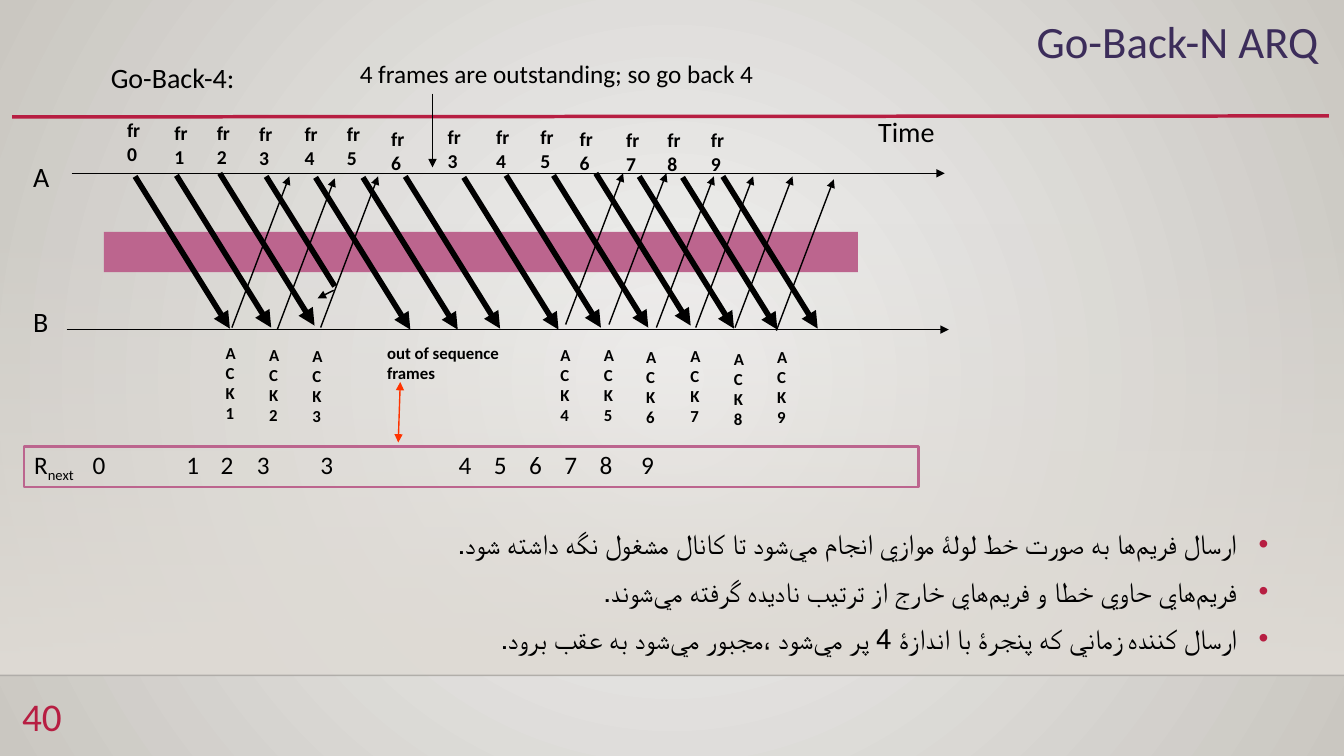
from lxml import etree
from pptx import Presentation, util as u
from pptx.dml.color import RGBColor
from pptx.enum import shapes, text
from pptx.oxml import parse_xml
from pptx.oxml.ns import nsdecls, qn

PX = 9144
COLORS = {
    "black": "000000", "title": "3C2D5A", "accent": "B71E42", "plum": "BC658E",
    "orange": "FF3300", "rule": "000001", "light": "F2F2F2", "dark": "CAC7C1", "sand": "DFDBD5",
}
CENTER_SHADE = '<a:path path="circle"><a:fillToRect l="50000" t="50000" r="50000" b="50000"/></a:path>'
DOWN_SHADE = '<a:lin ang="5400000" scaled="0"/>'
MARGINS = (10, 5)
WIDE_MARGINS = (15, 8)
PLAIN = {"name": "Calibri", "size": u.Pt(20)}
NOTE = {**PLAIN, "size": u.Pt(18)}
FRAME_LABEL = {**PLAIN, "size": u.Pt(14), "bold": True}
ACK_LABEL = {**FRAME_LABEL, "size": u.Pt(12)}
HEADING = {**PLAIN, "size": u.Pt(32)}
PAGE_NUMBER = {**PLAIN, "size": u.Pt(28)}

FRAME_STEP = (94, 151)
FRAMES = [
    (0, 111, 9, 134, 75), (1, 158, 12, 175, 74), (2, 200, 12, 218, 72), (3, 242, 13, 264, 75),
    (4, 287, 13, 313, 76), (5, 329, 13, 360, 76), (6, 373, 18, 402, 75), (3, 429, 16, 460, 76),
    (4, 477, 16, 502, 74), (5, 521, 16, 549, 74), (6, 560, 18, 591, 72), (7, 606, 19, 634, 75),
    (8, 647, 19, 677, 76), (9, 690, 19, 717, 75),
]
LOST_FRAME = 3
LOST_STEP = (68, 109)
ACK_STEP = (57, -150)
ACKS = [
    (214, 235, 230, 225), (257, 237, 275, 227), (300, 238, 318, 225),
    (546, 237, 561, 222), (589, 237, 604, 222), (631, 239, 651, 225),
    (675, 238, 690, 225), (718, 241, 729, 225), (761, 239, 770, 228),
]
R_NEXT = [
    (0, 58), (1, 151), (2, 185), (3, 221), (3, 284), (4, 421),
    (5, 456), (6, 491), (7, 526), (8, 561), (9, 602),
]
NON_JOINER = chr(8204)
BULLETS = [
    f"ارسال فريم{NON_JOINER}ها به صورت خط لولۀ موازي انجام مي{NON_JOINER}شود تا کانال مشغول نگه داشته شود.",
    f"فريم{NON_JOINER}هاي حاوي خطا و فريم{NON_JOINER}هاي خارج از ترتيب ناديده گرفته مي{NON_JOINER}شوند.",
    f"ارسال کننده زماني که پنجرۀ با اندازۀ 4 پر مي{NON_JOINER}شود ،مجبور مي{NON_JOINER}شود به عقب برود.",
]


def rgb(name):
    """Return the named colour."""
    return RGBColor.from_string(COLORS[name])


def scaled(values):
    """Turn px into EMU."""
    return [value * PX for value in values]


def apply(target, values):
    """Set each attribute of a dict on the target."""
    for name, value in values.items():
        setattr(target, name, value)


def style_runs(text_frame, font_format, color="black"):
    """Format every run of a text frame."""
    for paragraph in text_frame.paragraphs:
        for run in paragraph.runs:
            apply(run.font, font_format)
            run.font.color.rgb = rgb(color)


def set_frame(text_frame, margins=MARGINS, wrap=True, anchor=text.MSO_ANCHOR.TOP):
    """Set the insets, wrapping and anchor of a text frame."""
    side, end = scaled(margins)
    apply(text_frame, {
        "margin_left": side, "margin_right": side, "margin_top": end, "margin_bottom": end,
        "word_wrap": wrap, "vertical_anchor": anchor, "auto_size": text.MSO_AUTO_SIZE.NONE,
    })


def add_text(slide, box, words, font_format, color="black", **frame):
    """Add a text box and return its text frame."""
    text_frame = slide.shapes.add_textbox(*scaled(box)).text_frame
    text_frame.text = words
    set_frame(text_frame, **frame)
    style_runs(text_frame, font_format, color)
    return text_frame


def add_line(slide, start, end, width=1, color="black", ends=("tailEnd",)):
    """Add a straight line with arrowheads at the named ends."""
    line = slide.shapes.add_connector(shapes.MSO_CONNECTOR.STRAIGHT, *scaled((*start, *end)))
    line.line.width = u.Pt(width)
    line.line.color.rgb = rgb(color)
    properties = line.line._get_or_add_ln()
    for name in ends:
        etree.SubElement(properties, qn(f"a:{name}"), type="triangle")
    etree.SubElement(line.element.spPr, qn("a:effectLst"))
    return line


def add_rectangle(slide, box):
    """Add a rectangle without fill, line or shadow."""
    shape = slide.shapes.add_shape(shapes.MSO_SHAPE.RECTANGLE, *scaled(box))
    shape.shadow.inherit = False
    shape.fill.background()
    shape.line.fill.background()
    return shape


def shade(owner, fill, stops, direction):
    """Give a fill a gradient of (position, colour, opacity) stops."""
    fill.gradient()
    old = next(owner.iter(qn("a:gradFill")))
    marks = "".join(
        f'<a:gs pos="{position * 1000}"><a:srgbClr val="{COLORS[color]}">'
        f'<a:alpha val="{opacity * 1000}"/></a:srgbClr></a:gs>'
        for position, color, opacity in stops)
    old.getparent().replace(old, parse_xml(
        f'<a:gradFill {nsdecls("a")} rotWithShape="1"><a:gsLst>{marks}</a:gsLst>{direction}</a:gradFill>'))


def add_backdrop(slide, box):
    """Draw the background, the floor and the two rules."""
    left, top, width, height = box
    shade(slide.element, slide.background.fill,
          [(0, "light", 100), (100, "dark", 100)], CENTER_SHADE)
    wall = add_rectangle(slide, (left, top + 221, width, 449))
    shade(wall.element, wall.fill, [(0, "sand", 0), (100, "sand", 100)], DOWN_SHADE)
    floor = add_line(slide, (left, top + 670), (left + width, top + 670), color="rule", ends=())
    etree.SubElement(next(floor.element.iter(qn("a:srgbClr"))), qn("a:alpha"), val="20000")
    add_line(slide, (left + 12, top + 116), (left + 1318, top + 115), 2.5, "accent", ())


def add_title(slide, box):
    """Place the title at the right."""
    title = slide.shapes.title
    apply(title, dict(zip(("left", "top", "width", "height"), scaled(box))))
    title.text_frame.text = "Go-Back-N ARQ"
    set_frame(title.text_frame)
    apply(title.text_frame.paragraphs[0], {"alignment": text.PP_ALIGN.RIGHT, "line_spacing": 0.9})
    title.text_frame.paragraphs[0]._p.get_or_add_pPr().set("rtl", "1")
    style_runs(title.text_frame, HEADING, "title")


def add_bullets(slide, box):
    """Write the right-to-left bullet list."""
    text_frame = add_text(slide, box, "\n".join(BULLETS), PLAIN)
    for index, paragraph in enumerate(text_frame.paragraphs):
        apply(paragraph, {"alignment": text.PP_ALIGN.RIGHT, "line_spacing": 1.2,
                          "space_before": u.Pt(5 if index else 0)})
        properties = paragraph._p.get_or_add_pPr()
        for name, value in {"marL": 81 * PX, "indent": -31 * PX, "rtl": 1}.items():
            properties.set(name, str(value))
        color = etree.SubElement(properties, qn("a:buClr"))
        etree.SubElement(color, qn("a:srgbClr"), val=COLORS["accent"])
        etree.SubElement(properties, qn("a:buFont"), typeface="Arial")
        etree.SubElement(properties, qn("a:buChar"), char="•")


def add_timeline(slide, box):
    """Draw both stations, their frames and their acknowledgements."""
    left, top, width, height = box

    def at(x, y):
        """Return a point of the timeline."""
        return left + x, top + y

    channel = add_rectangle(slide, (*at(103, 130), 748, 40))
    channel.fill.solid()
    channel.fill.fore_color.rgb = rgb("plum")
    for name, label_y, start, end, y in (("A", 50, 71, 937, 72), ("B", 194, 66, 941, 227)):
        add_line(slide, at(start, y), at(end, y))
        add_text(slide, (*at(18, label_y), 54, 49), name, PLAIN, margins=WIDE_MARGINS)
    add_text(slide, (*at(856, 6), 92, 49), "Time", PLAIN, margins=WIDE_MARGINS, wrap=False)
    for index, (number, label_x, label_y, x, y) in enumerate(FRAMES):
        lost = index == LOST_FRAME
        across, down = LOST_STEP if lost else FRAME_STEP
        add_line(slide, at(x, y), at(x + across, y + down), 4, ends=() if lost else ("tailEnd",))
        add_text(slide, (*at(label_x, label_y), 55, 62), f"fr\n{number}", FRAME_LABEL,
                 margins=WIDE_MARGINS)
    add_line(slide, at(331, 188), at(315, 196))
    for number, (label_x, label_y, x, y) in enumerate(ACKS, 1):
        add_line(slide, at(x, y), at(x + ACK_STEP[0], y + ACK_STEP[1]))
        add_text(slide, (*at(label_x, label_y), 24, 91), f"ACK{number}", ACK_LABEL)
    add_text(slide, (*at(374, 235), 168, 50), "out of sequence frames", ACK_LABEL)
    add_line(slide, at(395, 339), at(397, 279), color="orange", ends=("headEnd", "tailEnd"))


def add_captions(slide, box):
    """Write the captions above the timeline."""
    left, top, width, height = box
    add_text(slide, (left, top + 2, 148, 43), "Go-Back-4:", PLAIN, wrap=False)
    add_text(slide, (left + 247, top, 410, 40), "4 frames are outstanding; so go back 4", NOTE,
             wrap=False)
    add_line(slide, (left + 329, top + 40), (left + 329, top + height))


def add_next_row(slide, box):
    """Write the receiver's next numbers at tab stops in a framed row."""
    row = add_rectangle(slide, box)
    row.line.color.rgb = rgb("plum")
    row.line.width = u.Pt(1.5)
    set_frame(row.text_frame, anchor=text.MSO_ANCHOR.MIDDLE)
    paragraph = row.text_frame.paragraphs[0]
    paragraph.alignment = text.PP_ALIGN.LEFT
    stops = etree.SubElement(paragraph._p.get_or_add_pPr(), qn("a:tabLst"))
    for number, x in R_NEXT:
        etree.SubElement(stops, qn("a:tab"), pos=str(x * PX), algn="l")
    numbers = "".join(f"\t{number}" for number, x in R_NEXT)
    for words, baseline in (("R", 0), ("next", -25000), (numbers, 0)):
        run = paragraph.add_run()
        run.text = words
        run._r.get_or_add_rPr().set("baseline", str(baseline))
    style_runs(row.text_frame, NOTE)


def main():
    """Build and save the slide."""
    presentation = Presentation()
    apply(presentation, {"slide_width": 1333 * PX, "slide_height": 750 * PX})
    slide = presentation.slides.add_slide(presentation.slide_layouts[5])
    add_backdrop(slide, (0, 0, 1333, 750))
    add_title(slide, (143, 15, 1175, 91))
    add_bullets(slide, (12, 511, 1306, 150))
    add_text(slide, (12, 683, 89, 55), "40", PAGE_NUMBER, "accent", anchor=text.MSO_ANCHOR.MIDDLE)
    add_timeline(slide, (0, 100, 950, 340))
    add_captions(slide, (100, 53, 657, 113))
    add_next_row(slide, (24, 443, 887, 40))
    presentation.save("out.pptx")


if __name__ == "__main__":
    main()
